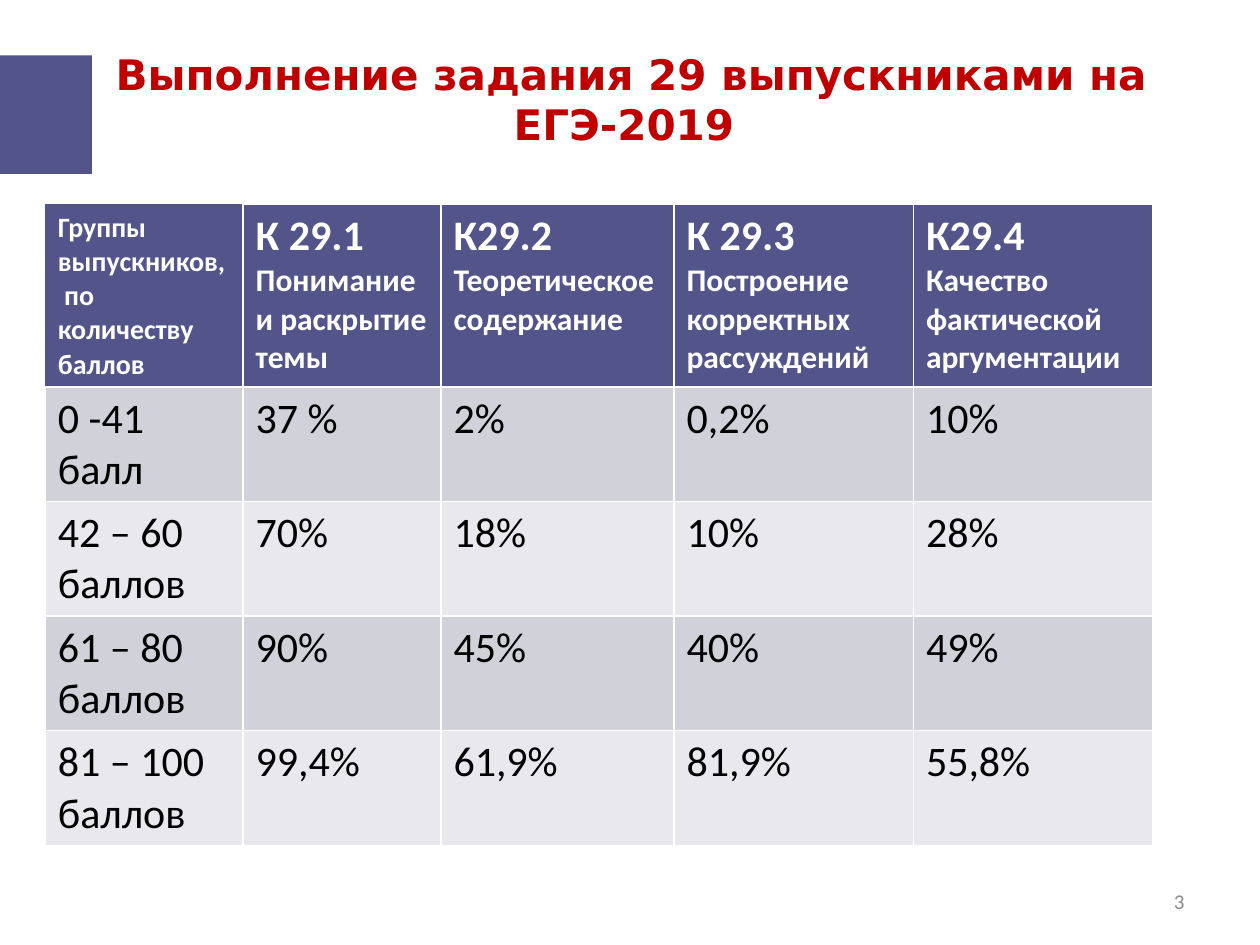
from lxml.etree import Element, SubElement
from pptx import Presentation
from pptx.dml.color import RGBColor
from pptx.enum.shapes import MSO_SHAPE
from pptx.enum.text import MSO_ANCHOR, PP_ALIGN
from pptx.oxml.ns import qn
from pptx.util import Inches, Pt

COLORS = {"violet": "53548A", "red": "C00000", "gray": "8C8C8C", "white": "FFFFFF",
          "black": "000000", "dark_band": "D1D1DA", "light_band": "E9E9ED"}

HEADERS = [
    [("Группы выпускников,  по количеству баллов", 16)],
    [("К 29.1", 24), ("Понимание и раскрытие темы", 18)],
    [("К29.2", 24), ("Теоретическое содержание", 18)],
    [("К 29.3", 24), ("Построение корректных рассуждений", 18)],
    [("К29.4", 24), ("Качество фактической аргументации", 18)],
]
RESULTS = [
    ["0 -41 балл", "37 %", "2%", "0,2%", "10%"],
    ["42 – 60 баллов", "70%", "18%", "10%", "28%"],
    ["61 – 80 баллов", "90%", "45%", "40%", "49%"],
    ["81 – 100 баллов", "99,4%", "61,9%", "81,9%", "55,8%"],
]
COLUMN_WIDTHS = [1.57, 1.57, 1.85, 1.9, 1.9]
ROW_HEIGHTS = [1.45] + [0.91] * len(RESULTS)


def write(frame, lines, color, bold=False, font="Calibri", align=PP_ALIGN.LEFT):
    """Fill a text frame with one paragraph per (text, size) pair."""
    frame.word_wrap = True
    for index, (text, size) in enumerate(lines):
        paragraph = frame.add_paragraph() if index else frame.paragraphs[0]
        paragraph.text = text
        paragraph.alignment = align
        paragraph.font.name = font
        paragraph.font.size = Pt(size)
        paragraph.font.bold = bold
        paragraph.font.color.rgb = RGBColor.from_string(COLORS[color])


deck = Presentation()
deck.slide_width, deck.slide_height = Inches(10), Inches(7.5)
page = deck.slides.add_slide(deck.slide_layouts[6])

# Title and page number
title = page.shapes.add_textbox(Inches(0.51), Inches(0.16), Inches(9), Inches(1.25))
title.text_frame.vertical_anchor = MSO_ANCHOR.MIDDLE
write(title.text_frame, [("Выполнение задания 29 выпускниками на ЕГЭ-2019 ", 24)],
      "red", bold=True, font="DejaVu Sans", align=PP_ALIGN.CENTER)

number = page.shapes.add_textbox(Inches(7.17), Inches(6.95), Inches(2.33), Inches(0.4))
number.text_frame.vertical_anchor = MSO_ANCHOR.MIDDLE
write(number.text_frame, [("3", 12)], "gray", align=PP_ALIGN.RIGHT)

# Results table; its default style draws the white rules
table = page.shapes.add_table(
    len(ROW_HEIGHTS), len(COLUMN_WIDTHS), Inches(0.36), Inches(1.62),
    Inches(sum(COLUMN_WIDTHS)), Inches(sum(ROW_HEIGHTS))).table
for column, width in zip(table.columns, COLUMN_WIDTHS):
    column.width = Inches(width)
for row, height in zip(table.rows, ROW_HEIGHTS):
    row.height = Inches(height)

rows = [HEADERS] + [[[(text, 24)] for text in result] for result in RESULTS]
for row_index, row in enumerate(rows):
    is_header = row_index == 0
    band = "violet" if is_header else "dark_band" if row_index % 2 else "light_band"
    for column_index, lines in enumerate(row):
        cell = table.cell(row_index, column_index)
        cell.fill.solid()
        cell.fill.fore_color.rgb = RGBColor.from_string(COLORS[band])
        write(cell.text_frame, lines, "white" if is_header else "black", bold=is_header)

# The corner cell has no rules
corner = table.cell(0, 0)._tc.get_or_add_tcPr()
for position, side in enumerate(("a:lnL", "a:lnR", "a:lnT", "a:lnB")):
    rule = Element(qn(side))
    SubElement(rule, qn("a:noFill"))
    corner.insert(position, rule)

# Accent block at the left edge
accent = page.shapes.add_shape(
    MSO_SHAPE.RECTANGLE, Inches(-0.02), Inches(0.44), Inches(0.75), Inches(0.94))
accent.shadow.inherit = False
accent.fill.solid()
accent.fill.fore_color.rgb = RGBColor.from_string(COLORS["violet"])
accent.line.fill.background()

deck.save("out.pptx")
